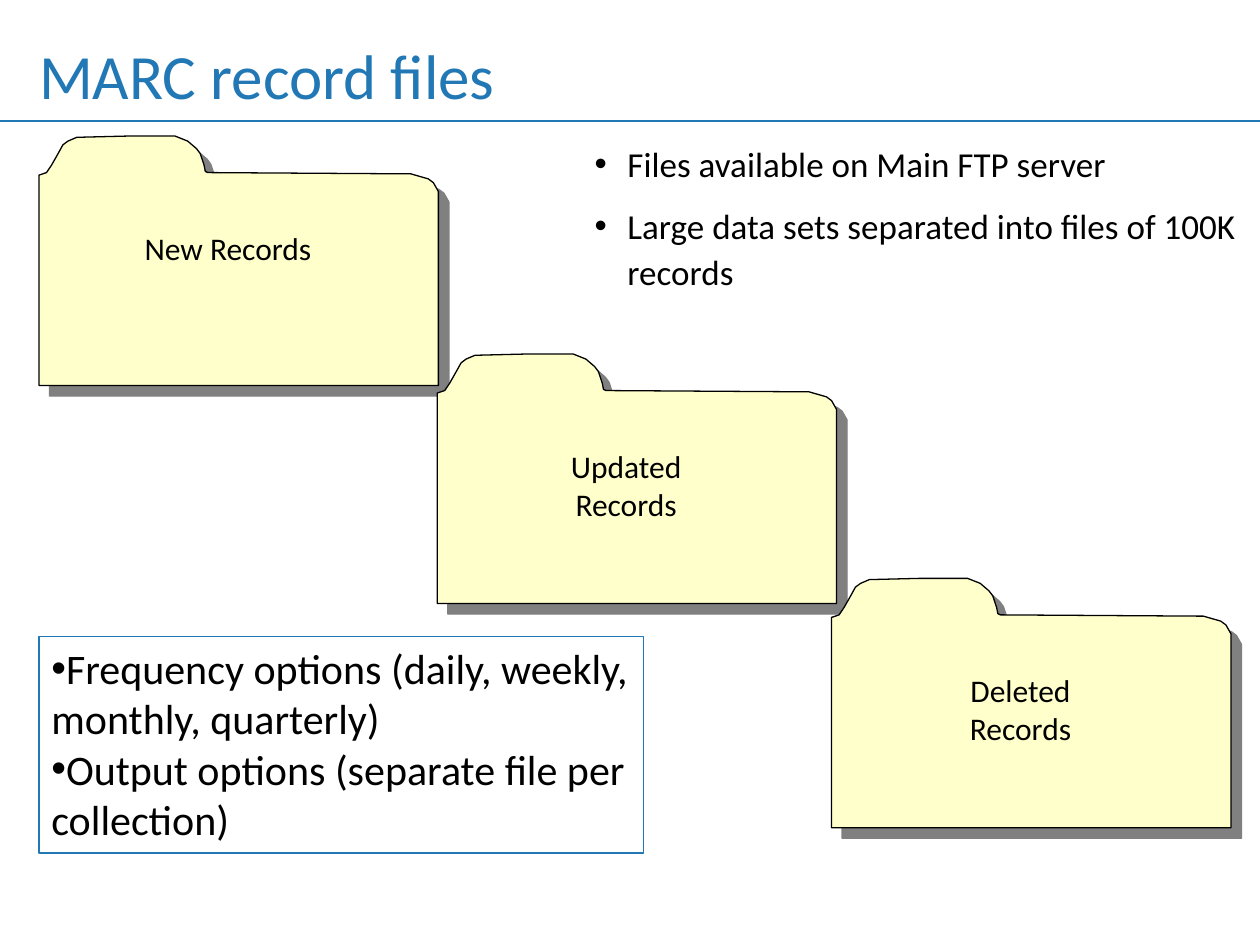
from lxml import etree
from pptx import Presentation
from pptx.dml.color import RGBColor
from pptx.enum.shapes import MSO_CONNECTOR, MSO_SHAPE
from pptx.enum.text import MSO_ANCHOR, MSO_AUTO_SIZE, PP_ALIGN
from pptx.oxml.ns import qn
from pptx.util import Inches, Pt

FONT = "Calibri"
COLORS = {"blue": "2178B5", "text": "000000", "folder": "FFFFCC", "shadow": "808080"}

TITLE = "MARC record files"
FILE_NOTES = [
    "Files available on Main FTP server",
    "Large data sets separated into files of 100K records",
]
OPTIONS = [
    "Frequency options (daily, weekly, monthly, quarterly)",
    "Output options (separate file per collection)",
]
# left, top, label paragraphs
FOLDERS = [
    (0.31, 1.08, ["New Records"]),
    (3.47, 2.81, ["Updated Records"]),
    (6.6, 4.59, ["Deleted", "Records"]),
]
# folder outline in inches from its top left corner
OUTLINE = [
    (2.9, 0.3), (1.34, 0.29), (1.32, 0.28), (1.31, 0.23), (1.28, 0.14),
    (1.25, 0.1), (1.18, 0.04), (1.08, 0), (0.7, 0), (0.3, 0.01),
    (0.23, 0.04), (0.19, 0.07), (0.14, 0.16), (0.1, 0.23), (0.06, 0.29),
    (0, 0.31), (0, 1.98), (3.17, 1.98), (3.17, 0.44), (3.13, 0.37),
    (3.09, 0.34), (2.95, 0.3),
]


def color(name):
    return RGBColor.from_string(COLORS[name])


def add_bullet(p, indent):
    pPr = p._p.get_or_add_pPr()
    pPr.set("marL", str(Inches(indent)))
    pPr.set("indent", str(-Inches(indent)))
    etree.SubElement(pPr, qn("a:buFont")).set("typeface", "Arial")
    etree.SubElement(pPr, qn("a:buChar")).set("char", "•")


def write(tf, lines, size, name="text", align=PP_ALIGN.LEFT, bullet_indent=None,
          line_spacing=None, gap=0):
    """Fill a text frame with one paragraph a line; gap is the points between them."""
    tf.word_wrap = True
    tf.auto_size = MSO_AUTO_SIZE.NONE
    tf.vertical_anchor = MSO_ANCHOR.TOP
    for i, line in enumerate(lines):
        p = tf.add_paragraph() if i else tf.paragraphs[0]
        p.alignment = align
        p.line_spacing = line_spacing
        p.space_before = Pt(gap if i else 0)
        if bullet_indent is not None:
            add_bullet(p, bullet_indent)
        r = p.add_run()
        r.text = line
        r.font.name = FONT
        r.font.size = Pt(size)
        r.font.color.rgb = color(name)


def place(sp, left, top, width, height):
    sp.left, sp.top, sp.width, sp.height = map(Inches, (left, top, width, height))


def add_hard_shadow(sp):
    sp.shadow.inherit = False
    effects = sp._element.spPr.find(qn("a:effectLst"))
    outer = etree.SubElement(effects, qn("a:outerShdw"), dist=str(Pt(8.5)),
                             dir=str(45 * 60000), algn="ctr", rotWithShape="0")
    etree.SubElement(outer, qn("a:srgbClr")).set("val", COLORS["shadow"])


def add_folder(s, left, top, label):
    points = [(Inches(left + x), Inches(top + y)) for x, y in OUTLINE]
    builder = s.shapes.build_freeform(*points[0])
    builder.add_line_segments(points[1:], close=True)
    sp = builder.convert_to_shape()
    sp.fill.solid()
    sp.fill.fore_color.rgb = color("folder")
    sp.line.color.rgb = color("text")
    sp.line.width = Pt(0.75)
    add_hard_shadow(sp)
    box = s.shapes.add_textbox(Inches(left + 0.72), Inches(top + 0.69),
                               Inches(1.56), Inches(0.71))
    write(box.text_frame, label, 18, align=PP_ALIGN.CENTER)


def main():
    prs = Presentation()
    prs.slide_width, prs.slide_height = Inches(10), Inches(7.5)
    s = prs.slides.add_slide(prs.slide_layouts[1])

    title = s.shapes.title
    place(title, 0.31, 0, 9.33, 0.67)
    tf = title.text_frame
    tf.margin_left = tf.margin_right = 0
    tf.margin_top, tf.margin_bottom = Inches(0.4), Inches(0.35)
    write(tf, [TITLE], 36, "blue", line_spacing=0.9)

    for left, top, label in FOLDERS:
        add_folder(s, left, top, label)

    options = s.shapes.add_shape(MSO_SHAPE.RECTANGLE, Inches(0.31), Inches(5.05),
                                 Inches(4.8), Inches(1.72))
    options.shadow.inherit = False
    options.fill.background()
    options.line.color.rgb = color("blue")
    options.line.width = Pt(0.75)
    write(options.text_frame, OPTIONS, 24, bullet_indent=0)

    body = s.placeholders[1]
    place(body, 4.62, 1.05, 5.38, 2.86)
    write(body.text_frame, FILE_NOTES, 20, bullet_indent=0.26, line_spacing=1.1, gap=9)

    rule = s.shapes.add_connector(MSO_CONNECTOR.STRAIGHT, 0, Inches(0.96),
                                  prs.slide_width, Inches(0.96))
    rule.line.color.rgb = color("blue")
    rule.line.width = Pt(1)
    etree.SubElement(rule._element.spPr, qn("a:effectLst"))

    prs.save("out.pptx")


if __name__ == "__main__":
    main()
